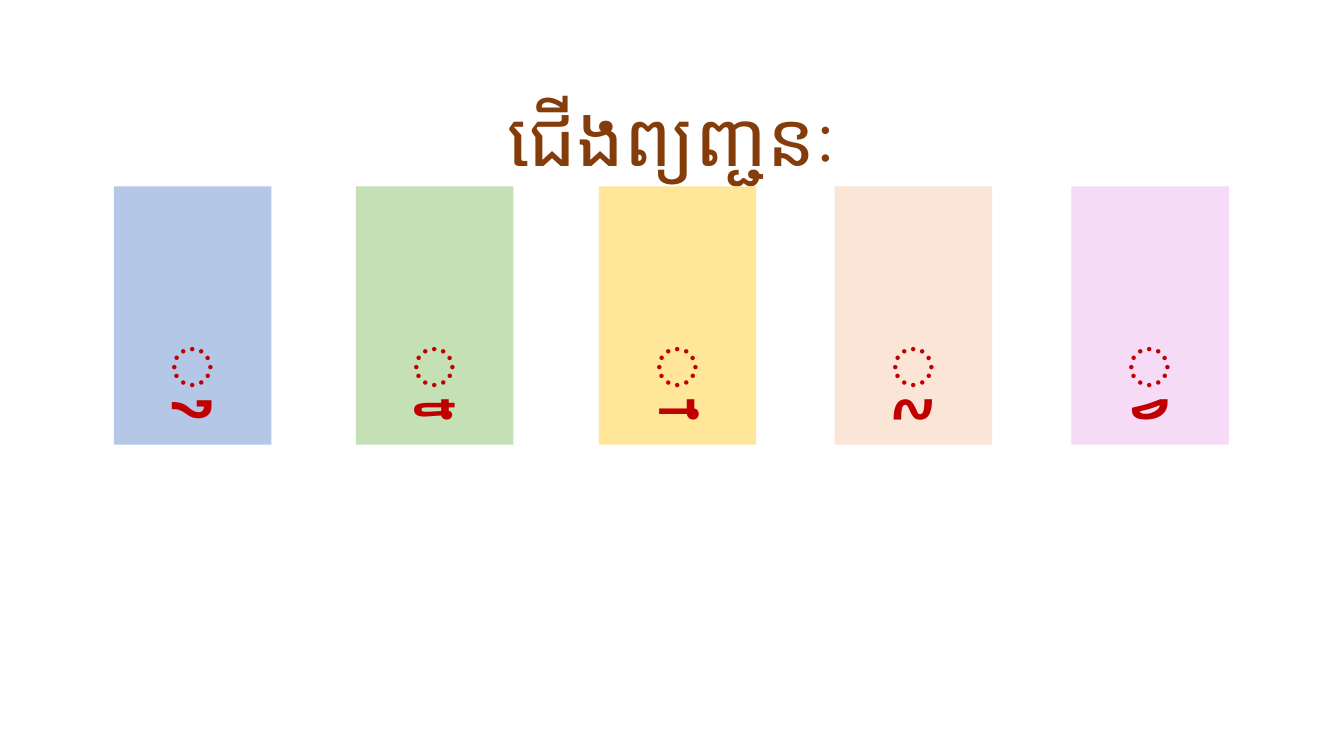
from dataclasses import dataclass

from pptx import Presentation
from pptx.dml.color import RGBColor
from pptx.enum.shapes import MSO_SHAPE
from pptx.enum.text import MSO_ANCHOR, MSO_AUTO_SIZE, PP_ALIGN
from pptx.util import Pt

RECT = MSO_SHAPE.RECTANGLE
CENTER = PP_ALIGN.CENTER
TOP, MIDDLE = MSO_ANCHOR.TOP, MSO_ANCHOR.MIDDLE
FIXED = MSO_AUTO_SIZE.NONE


@dataclass(frozen=True)
class Theme:
    brown: str = "843C0B"
    red: str = "C00000"
    title_font: str = "Calibri"
    card_font: str = "Roboto"
    title_size: int = 54
    card_size: int = 66


THEME = Theme()

# Left edge, letter and fill of each card
CARDS = [
    (81.36, "្ញ", "B4C7E7"),
    (254.16, "្ន", "C5E0B4"),
    (427.68, "្ម", "FFE699"),
    (596.16, "្ល", "FBE5D6"),
    (765.36, "្វ", "F6DBF7"),
]
CARD_TOP, CARD_WIDTH, CARD_HEIGHT = 133.2, 112.5, 184.4


def write(shape, text, font, size, color, spacing, anchor):
    frame = shape.text_frame
    frame.text = text
    frame.word_wrap = True
    frame.auto_size = FIXED
    frame.vertical_anchor = anchor
    line = frame.paragraphs[0]
    line.alignment = CENTER
    line.line_spacing = spacing
    line.space_before = Pt(0)
    run = line.runs[0]
    run.font.name = font
    run.font.size = Pt(size)
    run.font.color.rgb = RGBColor.from_string(color)


def add_title(slide, text, left, top, width, height):
    title = slide.shapes.title
    title.left, title.top = Pt(left), Pt(top)
    title.width, title.height = Pt(width), Pt(height)
    write(title, text, THEME.title_font, THEME.title_size, THEME.brown, 1.5, MIDDLE)


def add_card(slide, letter, fill, left, top, width, height):
    card = slide.shapes.add_shape(RECT, Pt(left), Pt(top), Pt(width), Pt(height))
    card.shadow.inherit = False
    card.fill.solid()
    card.fill.fore_color.rgb = RGBColor.from_string(fill)
    card.line.fill.background()
    write(card, letter, THEME.card_font, THEME.card_size, THEME.red, 2.0, TOP)


def main():
    deck = Presentation()
    deck.slide_width, deck.slide_height = Pt(960), Pt(540)
    slide = deck.slides.add_slide(deck.slide_layouts[5])
    add_title(slide, "ជើងព្យញ្ជនៈ", 66, 28.8, 828, 104.4)
    for left, letter, fill in CARDS:
        add_card(slide, letter, fill, left, CARD_TOP, CARD_WIDTH, CARD_HEIGHT)
    deck.save("out.pptx")


if __name__ == "__main__":
    main()
